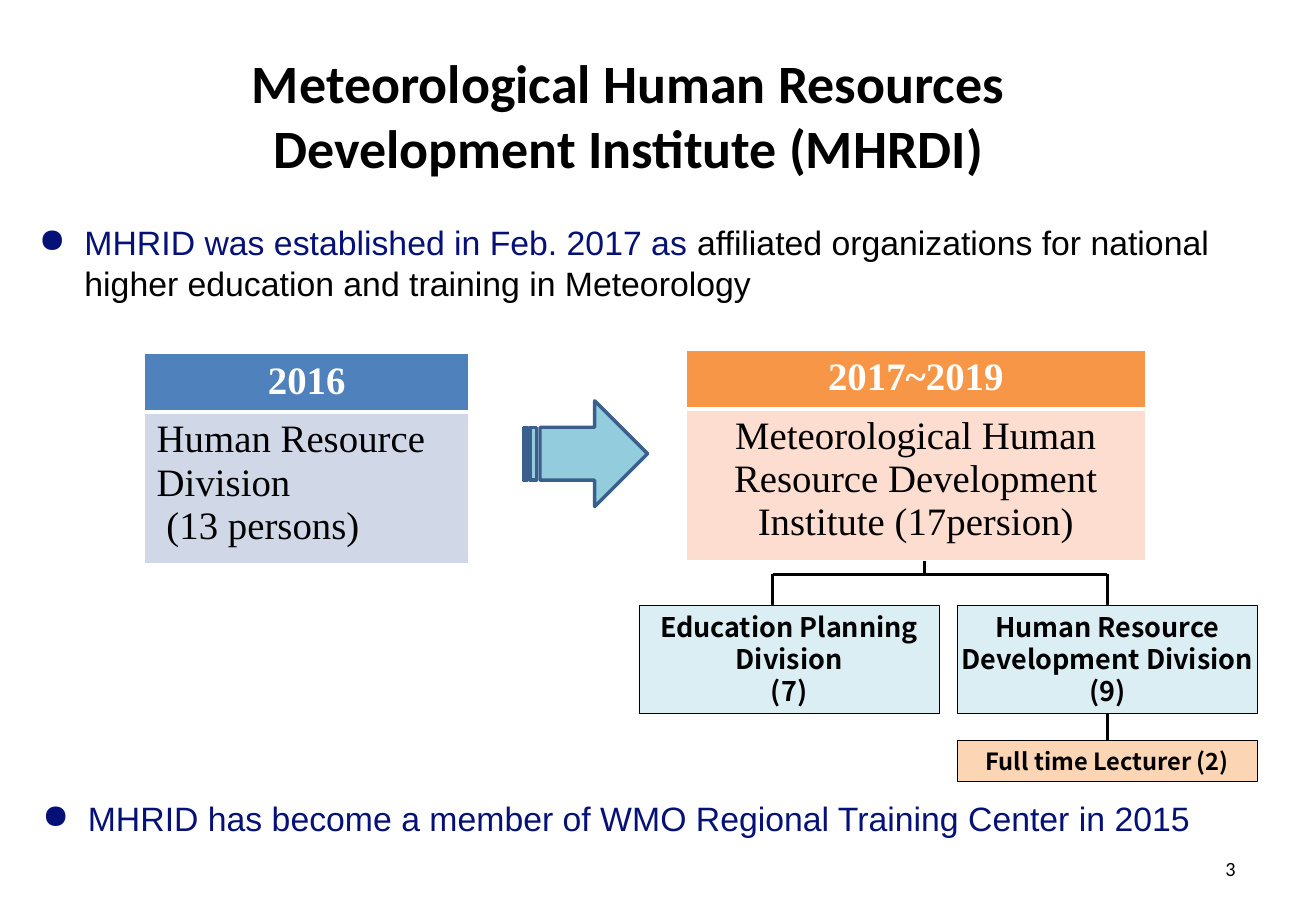
from lxml import etree
from pptx import Presentation
from pptx.dml.color import RGBColor
from pptx.enum.shapes import MSO_CONNECTOR, MSO_SHAPE
from pptx.enum.text import MSO_ANCHOR, PP_ALIGN
from pptx.oxml.ns import qn
from pptx.util import Pt

LEFT, CENTER, RIGHT = PP_ALIGN.LEFT, PP_ALIGN.CENTER, PP_ALIGN.RIGHT
MIDDLE = MSO_ANCHOR.MIDDLE
STRAIGHT = MSO_CONNECTOR.STRAIGHT
TOP_SIDE, BOTTOM_SIDE = 0, 2
COLORS = {
    "black": "000000", "white": "FFFFFF", "navy": "061178",
    "blue": "4F81BD", "pale_blue": "D0D8E8",
    "orange": "F79646", "pale_orange": "FCDDCF",
    "arrow": "93CDDD", "arrow_line": "3A5F8C",
    "division": "DBEEF4", "lecturer": "FCD5B5",
}


def rgb(name):
    return RGBColor.from_string(COLORS[name])


def write(tf, text, size, font="Arial", color="black", bold=False, align=LEFT,
          spacing=None, bullet=False, tail=""):
    """Fill a text frame; tail is a black run after the last line."""
    tf.word_wrap = True
    for i, line in enumerate(text.split("\n")):
        p = tf.paragraphs[0] if i == 0 else tf.add_paragraph()
        p.alignment = align
        if spacing:
            p.line_spacing = Pt(spacing)
        if bullet:
            pPr = p._p.get_or_add_pPr()
            pPr.set("marL", str(Pt(27)))
            pPr.set("indent", str(-Pt(27)))
            etree.SubElement(pPr, qn("a:buChar")).set("char", "●")
        runs = [(line, color)]
        if tail:
            runs.append((tail, "black"))
        for words, run_color in runs:
            r = p.add_run()
            r.text = words
            r.font.size = Pt(size)
            r.font.name = font
            r.font.bold = bold
            r.font.color.rgb = rgb(run_color)


prs = Presentation()
prs.slide_width, prs.slide_height = Pt(780), Pt(540)
s = prs.slides.add_slide(prs.slide_layouts[6])

# Title, bullets and page number
texts = [
    (83.5, 26, 578, 85, "Meteorological Human Resources\nDevelopment Institute (MHRDI)",
     dict(size=32, font="Calibri", bold=True, align=CENTER)),
    (16, 128, 748, 55.5, "MHRID was established in Feb. 2017 as ",
     dict(size=20, color="navy", bullet=True,
          tail="affiliated organizations for national higher education "
               "and training in Meteorology")),
    (18, 469.5, 748, 31.5,
     "MHRID has become a member of WMO Regional Training Center in 2015",
     dict(size=20, color="navy", bullet=True)),
    (559, 500.5, 182, 29, "3", dict(size=12, font="Calibri", align=RIGHT)),
]
for x, y, w, h, text, style in texts:
    tf = s.shapes.add_textbox(Pt(x), Pt(y), Pt(w), Pt(h)).text_frame
    write(tf, text, **style)
tf.vertical_anchor = MIDDLE
tf.margin_left = tf.margin_right = Pt(8.6)

# Organization lines: stem, bus, left drop, right drop, lecturer link
BUS_Y, BOX_Y = 340.5, 358.5
LEFT_X, STEM_X, RIGHT_X = 458, 548, 656.3
lines = []
for x1, y1, x2, y2 in [
    (STEM_X, 255, STEM_X, BUS_Y),
    (LEFT_X, BUS_Y, RIGHT_X, BUS_Y),
    (LEFT_X, BUS_Y, LEFT_X, BOX_Y),
    (RIGHT_X, BUS_Y, RIGHT_X, BOX_Y),
    (RIGHT_X, 423, RIGHT_X, 439),
]:
    line = s.shapes.add_connector(STRAIGHT, Pt(x1), Pt(y1), Pt(x2), Pt(y2))
    line.line.color.rgb = rgb("black")
    line.line.width = Pt(1.5)
    etree.SubElement(line._element.spPr, qn("a:effectLst"))
    lines.append(line)
right_drop, lecturer_link = lines[3:]

# Before and after tables
for x, y, w, head, head_fill, body, body_fill, align in [
    (85.7, 209.5, 192.3, "2016", "blue",
     "Human Resource Division\n (13 persons)", "pale_blue", LEFT),
    (406.8, 207.5, 272.2, "2017~2019", "orange",
     "Meteorological Human Resource Development Institute (17persion)",
     "pale_orange", CENTER),
]:
    table = s.shapes.add_table(2, 1, Pt(x), Pt(y), Pt(w), Pt(124)).table
    table.columns[0].width = Pt(w)
    rows = [(head, head_fill, "white", True, CENTER, 34, 3),
            (body, body_fill, "black", False, align, 90, 1)]
    for i, (text, fill, color, bold, al, height, bottom) in enumerate(rows):
        table.rows[i].height = Pt(height)
        cell = table.cell(i, 0)
        write(cell.text_frame, text, 23, font="Times New Roman", color=color,
              bold=bold, align=al)
        tcPr = cell._tc.get_or_add_tcPr()
        top = 1 if i == 0 else 3
        for tag, width in [("lnL", 1), ("lnR", 1), ("lnT", top), ("lnB", bottom)]:
            ln = etree.SubElement(tcPr, qn("a:" + tag), w=str(Pt(width)))
            solid = etree.SubElement(ln, qn("a:solidFill"))
            etree.SubElement(solid, qn("a:srgbClr"), val=COLORS["white"])
        cell.fill.solid()
        cell.fill.fore_color.rgb = rgb(fill)

# Arrow and organization boxes
STRIPED, RECT = MSO_SHAPE.STRIPED_RIGHT_ARROW, MSO_SHAPE.RECTANGLE
shapes = []
for kind, x, y, w, h, fill, outline, weight, text, size, spacing in [
    (STRIPED, 310.3, 237.6, 73.5, 62.7, "arrow", "arrow_line", 2, "", 0, 0),
    (RECT, 378.7, BOX_Y, 178, 64.5, "division", "black", 0.25,
     "Education Planning Division\n(7)", 16, 19),
    (RECT, 567.3, BOX_Y, 178, 64.5, "division", "black", 0.25,
     "Human Resource Development Division\n(9)", 16, 19),
    (RECT, 567.3, 439, 178, 24, "lecturer", "black", 0.25,
     "Full time Lecturer (2)", 14, 16.5),
]:
    sp = s.shapes.add_shape(kind, Pt(x), Pt(y), Pt(w), Pt(h))
    sp.shadow.inherit = False
    sp.fill.solid()
    sp.fill.fore_color.rgb = rgb(fill)
    sp.line.color.rgb = rgb(outline)
    sp.line.width = Pt(weight)
    if text:
        tf = sp.text_frame
        tf.margin_left = tf.margin_right = 0
        tf.vertical_anchor = MIDDLE
        write(tf, text, size, font="Noto Sans CJK KR", bold=True, align=CENTER,
              spacing=spacing)
    shapes.append(sp)

# Join the lines to the boxes
development, lecturer = shapes[2:]
right_drop.end_connect(development, TOP_SIDE)
lecturer_link.begin_connect(development, BOTTOM_SIDE)
lecturer_link.end_connect(lecturer, TOP_SIDE)

prs.save("out.pptx")
